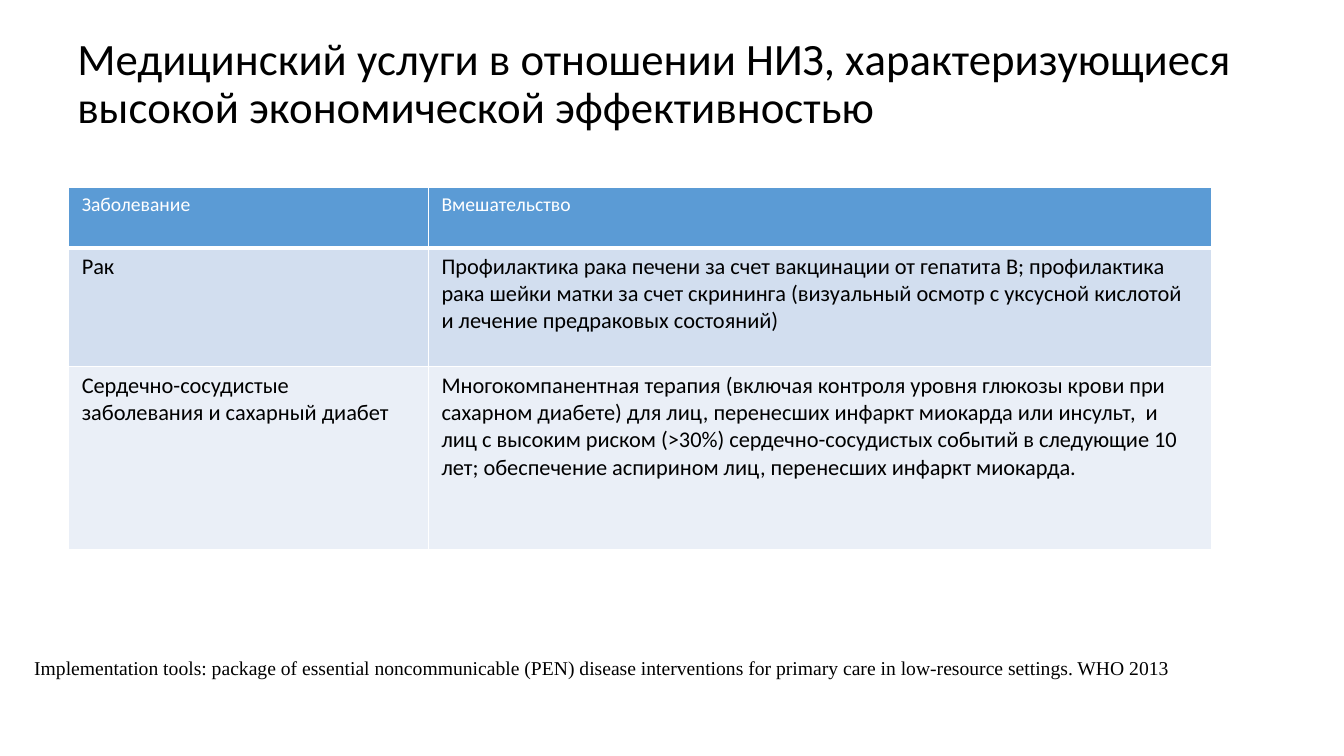
import pptx
import pptx.dml.color
import pptx.enum.text
import pptx.oxml.ns
import pptx.util
from lxml import etree

Pt = pptx.util.Pt
RGBColor = pptx.dml.color.RGBColor
Anchor = pptx.enum.text.MSO_ANCHOR
Align = pptx.enum.text.PP_ALIGN

BLACK = RGBColor(0x00, 0x00, 0x00)
WHITE = RGBColor(0xFF, 0xFF, 0xFF)
HEADER_BLUE = RGBColor(0x5B, 0x9B, 0xD5)
BAND_BLUE = RGBColor(0xD2, 0xDE, 0xEF)
BAND_PALE = RGBColor(0xEA, 0xEF, 0xF7)

COLUMN_WIDTHS = (257, 559.5)
# Row height, fill, text size, text colour, bottom border width
ROW_STYLES = (
    (43, HEADER_BLUE, 14, WHITE, 3),
    (85, BAND_BLUE, 16, BLACK, 1),
    (130.5, BAND_PALE, 16, BLACK, 1),
)
INTERVENTIONS = (
    ("Заболевание", "Вмешательство"),
    ("Рак",
     "Профилактика рака печени за счет вакцинации от гепатита В; "
     "профилактика рака шейки матки за счет скрининга (визуальный осмотр "
     "с уксусной кислотой и лечение предраковых состояний)"),
    ("Сердечно-сосудистые заболевания и сахарный диабет",
     "Многокомпанентная терапия (включая контроля уровня глюкозы крови при "
     "сахарном диабете) для лиц, перенесших инфаркт миокарда или инсульт,  и "
     "лиц с высоким риском (>30%) сердечно-сосудистых событий в следующие 10 "
     "лет; обеспечение аспирином лиц, перенесших инфаркт миокарда."),
)


def write(frame, text, size=16, color=BLACK, font="Calibri", spacing=1.0):
    frame.word_wrap = True
    paragraph = frame.paragraphs[0]
    paragraph.alignment = Align.LEFT
    paragraph.line_spacing = spacing
    run = paragraph.add_run()
    run.text = text
    run.font.size = Pt(size)
    run.font.name = font
    run.font.bold = False
    run.font.color.rgb = color


def add_borders(cell, top, bottom):
    """Draw white cell borders; call before the fill, which must follow them."""
    properties = cell._tc.get_or_add_tcPr()
    for side, width in (("L", 1), ("R", 1), ("T", top), ("B", bottom)):
        border = etree.SubElement(
            properties, pptx.oxml.ns.qn(f"a:ln{side}"), w=str(Pt(width)))
        fill = etree.SubElement(border, pptx.oxml.ns.qn("a:solidFill"))
        etree.SubElement(fill, pptx.oxml.ns.qn("a:srgbClr"), val=str(WHITE))


def place_title(slide, left, top, width, height):
    title = slide.shapes.title
    title.left, title.top = Pt(left), Pt(top)
    title.width, title.height = Pt(width), Pt(height)
    title.text_frame.vertical_anchor = Anchor.MIDDLE
    write(title.text_frame,
          "Медицинский услуги в отношении НИЗ, характеризующиеся "
          "высокой экономической эффективностью", size=32, spacing=0.9)


def add_interventions(slide, left, top, width, height):
    table = slide.shapes.add_table(
        len(INTERVENTIONS), len(COLUMN_WIDTHS),
        Pt(left), Pt(top), Pt(width), Pt(height)).table
    for column, column_width in zip(table.columns, COLUMN_WIDTHS):
        column.width = Pt(column_width)
    border_above = 1
    for row, texts, style in zip(table.rows, INTERVENTIONS, ROW_STYLES):
        row_height, fill, size, color, border_below = style
        row.height = Pt(row_height)
        for cell, text in zip(row.cells, texts):
            add_borders(cell, border_above, border_below)
            cell.fill.solid()
            cell.fill.fore_color.rgb = fill
            cell.margin_left = cell.margin_right = Pt(9.4)
            cell.margin_top = cell.margin_bottom = Pt(3.6)
            write(cell.text_frame, text, size=size, color=color)
        border_above = border_below


def add_reference(slide, left, top, width, height):
    reference = slide.shapes.add_textbox(
        Pt(left), Pt(top), Pt(width), Pt(height))
    write(reference.text_frame,
          "Implementation tools: package of essential noncommunicable (PEN) "
          "disease interventions for primary care in low-resource settings. "
          "WHO 2013", size=14, font="Times New Roman")


def main():
    presentation = pptx.Presentation()
    presentation.slide_width, presentation.slide_height = Pt(960), Pt(540)
    slide = presentation.slides.add_slide(presentation.slide_layouts[5])
    place_title(slide, 48, 21.6, 864, 78.5)
    add_interventions(slide, 49, 134, sum(COLUMN_WIDTHS),
                      sum(style[0] for style in ROW_STYLES))
    add_reference(slide, 17.3, 465, 907, 24.5)
    presentation.save("out.pptx")


if __name__ == "__main__":
    main()
